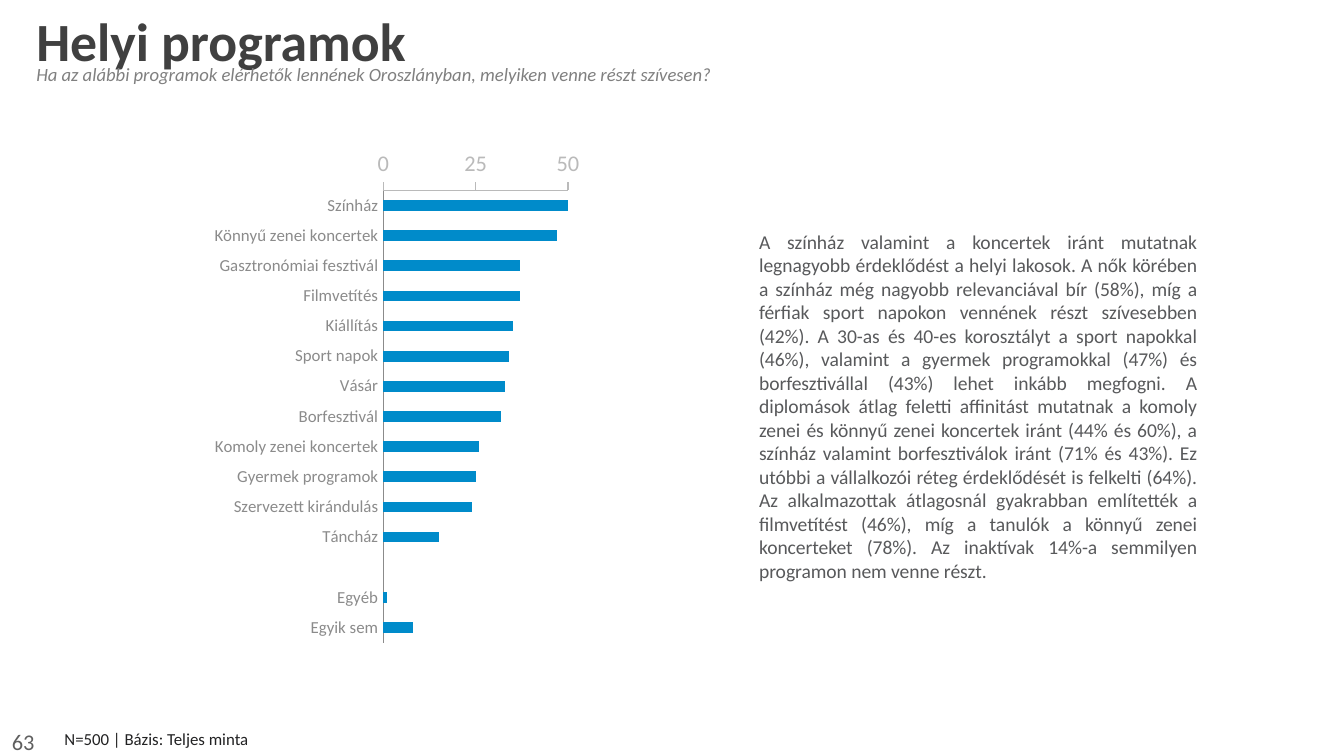
from lxml import etree
from pptx import Presentation
from pptx.chart.data import CategoryChartData
from pptx.dml.color import RGBColor
from pptx.enum import chart as ch, text as tx
from pptx.oxml import parse_xml
from pptx.oxml.ns import nsdecls, qn
from pptx.util import Inches, Pt

FONT = "Calibri"
SLIDE_WIDTH = Inches(10)
SLIDE_HEIGHT = SLIDE_WIDTH * 9 // 16
PROGRAMS = [
    ("Színház", 50), ("Könnyű zenei koncertek", 47), ("Gasztronómiai fesztivál", 37),
    ("Filmvetítés", 37), ("Kiállítás", 35), ("Sport napok", 34), ("Vásár", 33),
    ("Borfesztivál", 32), ("Komoly zenei koncertek", 26), ("Gyermek programok", 25),
    ("Szervezett kirándulás", 24), ("Táncház", 15), ("", None), ("Egyéb", 1), ("Egyik sem", 8),
]
PLOT_AREA = {"x": 0.625, "y": 0.19, "w": 0.3, "h": 0.774}
SUMMARY = (
    "A színház valamint a koncertek iránt mutatnak legnagyobb érdeklődést a helyi lakosok. "
    "A nők körében a színház még nagyobb relevanciával bír (58%), míg a férfiak sport napokon "
    "vennének részt szívesebben (42%). A 30-as és 40-es korosztályt a sport napokkal (46%), "
    "valamint a gyermek programokkal (47%) és borfesztivállal (43%) lehet inkább megfogni. "
    "A diplomások átlag feletti affinitást mutatnak a komoly zenei és könnyű zenei koncertek "
    "iránt (44% és 60%), a színház valamint borfesztiválok iránt (71% és 43%). Ez utóbbi a "
    "vállalkozói réteg érdeklődését is felkelti (64%). Az alkalmazottak átlagosnál gyakrabban "
    "említették a filmvetítést (46%), míg a tanulók a könnyű zenei koncerteket (78%). "
    "Az inaktívak 14%-a semmilyen programon nem venne részt."
)


def color(value):
    return RGBColor.from_string(value)


def set_attributes(target, values):
    for name, value in values.items():
        setattr(target, name, value)


def set_font(font, size, hex_color, **values):
    set_attributes(font, {"name": FONT, "size": Pt(size), **values})
    font.color.rgb = color(hex_color)


def write_text(shape, box, content, size, hex_color, margins=(0.1, 0.05),
               anchor=tx.MSO_ANCHOR.TOP, align=tx.PP_ALIGN.LEFT, **font_values):
    """Place a text shape; box is left, top, width, height and margins are side, top/bottom."""
    set_attributes(shape, dict(zip(("left", "top", "width", "height"), map(Inches, box))))
    side, edge = map(Inches, margins)
    frame = shape.text_frame
    set_attributes(frame, {
        "word_wrap": True, "auto_size": tx.MSO_AUTO_SIZE.NONE, "vertical_anchor": anchor,
        "margin_left": side, "margin_right": side, "margin_top": edge, "margin_bottom": edge,
    })
    frame.text = content
    paragraph = frame.paragraphs[0]
    set_attributes(paragraph, {"alignment": align, "space_before": Pt(0)})
    set_font(paragraph.runs[0].font, size, hex_color, **font_values)


def add_text(slide, box, *args, **values):
    write_text(slide.shapes.add_textbox(*map(Inches, box)), box, *args, **values)


def remove_bullet(paragraph):
    properties = paragraph._p.get_or_add_pPr()
    properties.set("marL", "0")
    properties.set("indent", "0")
    etree.SubElement(properties, qn("a:buNone"))


def format_axis(axis, size, hex_color, tick_mark):
    set_attributes(axis, {
        "has_major_gridlines": False, "major_tick_mark": tick_mark,
        "minor_tick_mark": ch.XL_TICK_MARK.NONE,
    })
    set_font(axis.tick_labels.font, size, hex_color)
    axis.format.line.color.rgb = color(hex_color)
    axis.format.line.width = Pt(0.75)


def set_plot_layout(chart):
    """Fix the inner plot area as fractions of the chart."""
    modes = "".join(f'<c:{key}Mode val="edge"/>' for key in "xy")
    sizes = "".join(f'<c:{key} val="{value}"/>' for key, value in PLOT_AREA.items())
    layout = parse_xml(
        f'<c:layout {nsdecls("c")}><c:manualLayout><c:layoutTarget val="inner"/>'
        f'{modes}{sizes}</c:manualLayout></c:layout>')
    plot_area = chart._chartSpace.chart.plotArea
    for existing in plot_area.findall(qn("c:layout")):
        plot_area.remove(existing)
    plot_area.insert(0, layout)


def add_program_chart(slide):
    data = CategoryChartData(number_format="0")
    data.categories = [name for name, _ in PROGRAMS]
    data.add_series("Series 1", [share for _, share in PROGRAMS])
    box = map(Inches, (-0.01, 0.59, 4.58, 4.35))
    chart = slide.shapes.add_chart(ch.XL_CHART_TYPE.BAR_CLUSTERED, *box, data).chart
    set_attributes(chart, {"has_legend": False, "has_title": False})
    set_font(chart.font, 10, "003399")

    format_axis(chart.category_axis, 9, "8B8B8B", ch.XL_TICK_MARK.NONE)
    chart.category_axis.reverse_order = True
    format_axis(chart.value_axis, 12, "BABABA", ch.XL_TICK_MARK.OUTSIDE)
    set_attributes(chart.value_axis, {"minimum_scale": 0, "maximum_scale": 50, "major_unit": 25})
    set_attributes(chart.value_axis.tick_labels,
                   {"number_format": "0", "number_format_is_linked": False})

    plot = chart.plots[0]
    set_attributes(plot, {"gap_width": 182, "vary_by_categories": False})
    fill = plot.series[0].format.fill
    fill.solid()
    fill.fore_color.rgb = color("008BCA")
    set_plot_layout(chart)


def main():
    presentation = Presentation()
    set_attributes(presentation, {"slide_width": SLIDE_WIDTH, "slide_height": SLIDE_HEIGHT})
    slide = presentation.slides.add_slide(presentation.slide_layouts[1])
    question = slide.placeholders[1]

    add_text(slide, (-0.01, 5.37, 2.33, 0.3), "63", 12, "5F5F5F", anchor=tx.MSO_ANCHOR.MIDDLE)
    write_text(question, (0.23, 0.47, 9.5, 0.24),
               "Ha az alábbi programok elérhetők lennének Oroszlányban, melyiken venne részt szívesen?",
               10, "808080", margins=(0.04, 0), italic=True)
    remove_bullet(question.text_frame.paragraphs[0])
    write_text(slide.shapes.title, (0.23, 0.01, 9.49, 0.51), "Helyi programok",
               28.8, "404040", margins=(0.04, 0.05), bold=True)
    add_program_chart(slide)
    add_text(slide, (0.48, 5.42, 5.26, 0.45), "N=500 | Bázis: Teljes minta", 9, "222223",
             margins=(0, 0))
    add_text(slide, (5.55, 1.66, 3.46, 2.75), SUMMARY, 10.5, "58595B",
             align=tx.PP_ALIGN.JUSTIFY)
    presentation.save("out.pptx")


if __name__ == "__main__":
    main()
